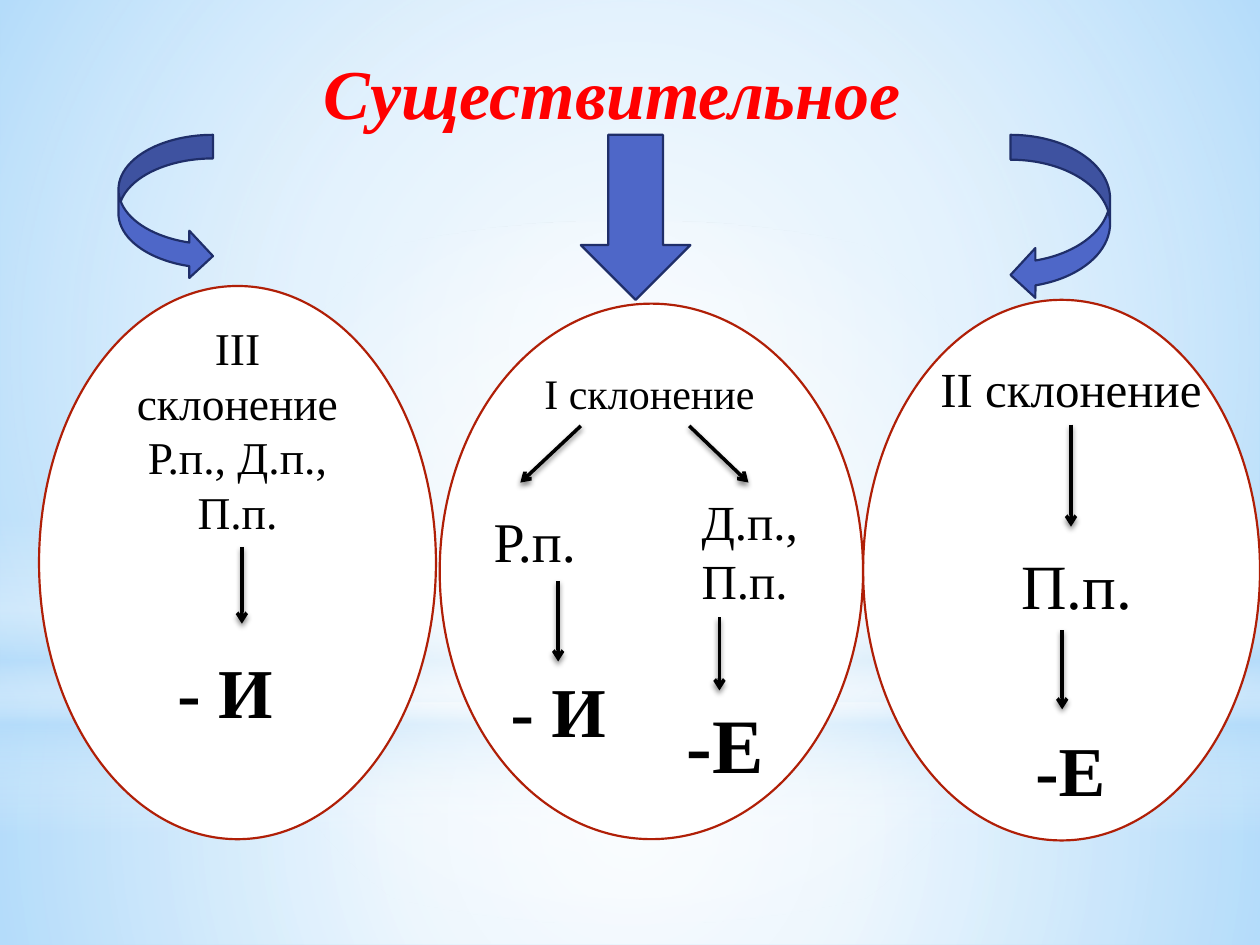
from lxml import etree
from pptx import Presentation, util as u
from pptx.dml.color import RGBColor
from pptx.enum import shapes, text
from pptx.oxml import parse_xml
from pptx.oxml.ns import nsdecls, qn

SCALE = 9144
FONT = "Times New Roman"
COLORS = {"sky": "B4DCFA", "white": "FFFFFF", "black": "000000", "title": "FF0000",
          "rim": "B01F07", "arrow": "4E67C8", "arrow_edge": "1F2E69"}
SHAPE = shapes.MSO_SHAPE
CENTER, LEFT = text.PP_ALIGN.CENTER, text.PP_ALIGN.LEFT

GLOWS = [
    (SHAPE.RECTANGLE, (0, 558, 1000, 192), "circle",
     [(0, "white", 91), (37, "white", 76), (100, "sky", 79)]),
    (SHAPE.RECTANGLE, (0, 0, 1000, 558), "circle",
     [(0, "white", 89), (48, "white", 62), (100, "sky", 79)]),
    (SHAPE.RECTANGLE, (0, 412, 1000, 250), "down",
     [(0, "white", 0), (29, "white", 30), (45, "sky", 40),
      (55, "white", 26), (65, "sky", 60), (100, "white", 0)]),
    (SHAPE.OVAL, (0, 175, 1000, 558), "circle",
     [(0, "white", 100), (56, "white", 0)]),
]
FIGURES = [
    (SHAPE.OVAL, (31, 227, 315, 439), "white", "rim"),
    (SHAPE.OVAL, (685, 238, 315, 429), "white", "rim"),
    (SHAPE.OVAL, (349, 241, 336, 425), "white", "rim"),
    (SHAPE.CURVED_RIGHT_ARROW, (94, 107, 75, 115), "arrow", "arrow_edge"),
    (SHAPE.CURVED_LEFT_ARROW, (802, 107, 79, 131), "arrow", "arrow_edge"),
    (SHAPE.DOWN_ARROW, (461, 107, 87, 131), "arrow", "arrow_edge"),
]
TITLE = ("Существительное", (136, 34, 700, 80), 40)
LABELS = {
    "third": (["III склонение", "Р.п., Д.п., П.п."], (94, 249, 189, 185), 26, CENTER),
    "first": (["I склонение"], (413, 287, 205, 50), 24, CENTER),
    "first genitive": (["Р.п."], (382, 397, 122, 64), 32, LEFT),
    "first dative": (["Д.п., П.п."], (547, 385, 102, 104), 28, LEFT),
    "second": (["II склонение"], (720, 280, 260, 57), 28, CENTER),
    "second case": (["П.п."], (768, 429, 173, 71), 36, CENTER),
}
ENDINGS = {
    "third ending": (["- И"], (94, 510, 169, 77), 40, CENTER),
    "genitive ending": (["- И"], (382, 525, 122, 77), 40, CENTER),
    "dative ending": (["-Е"], (517, 548, 117, 84), 44, CENTER),
    "second ending": (["-Е"], (781, 572, 137, 77), 40, CENTER),
}
LINKS = [
    ((192, 434), (192, 495), None, None),
    ((461, 338), (413, 383), None, None),
    ((547, 338), (594, 383), None, None),
    ((443, 461), (443, 525), "first genitive", "genitive ending"),
    ((571, 490), (571, 548), None, None),
    ((850, 338), (850, 418), "second", None),
    ((843, 500), (843, 563), None, None),
]


def px(values):
    return [value * SCALE for value in values]


def color(name):
    return RGBColor.from_string(COLORS[name])


def add_figure(slide, kind, box):
    shape = slide.shapes.add_shape(kind, *px(box))
    shape.shadow.inherit = False
    return shape


def add_glow(slide, kind, box, direction, stops):
    shape = add_figure(slide, kind, box)
    shape.line.fill.background()
    stop_xml = "".join(
        f'<a:gs pos="{position * 1000}"><a:srgbClr val="{COLORS[name]}">'
        f'<a:alpha val="{opacity * 1000}"/></a:srgbClr></a:gs>'
        for position, name, opacity in stops)
    if direction == "circle":
        course = ('<a:path path="circle"><a:fillToRect l="50000" t="50000" '
                  'r="50000" b="50000"/></a:path>')
    else:
        course = '<a:lin ang="5400000" scaled="0"/>'
    gradient = parse_xml(f'<a:gradFill {nsdecls("a")} rotWithShape="1">'
                         f'<a:gsLst>{stop_xml}</a:gsLst>{course}</a:gradFill>')
    shape._element.spPr.find(qn("a:prstGeom")).addnext(gradient)


def add_label(slide, lines, box, size, align, ink="black", bold=False, italic=False):
    label = slide.shapes.add_textbox(*px(box))
    frame = label.text_frame
    frame.word_wrap = True
    frame.text = "\n".join(lines)
    for paragraph in frame.paragraphs:
        paragraph.alignment = align
        font = paragraph.font
        font.name, font.size = FONT, u.Pt(size)
        font.bold, font.italic = bold, italic
        font.color.rgb = color(ink)
    return label


def add_link(slide, start, end, source, target):
    link = slide.shapes.add_connector(shapes.MSO_CONNECTOR.STRAIGHT, *px(start + end))
    if source:
        link.begin_connect(source, 2)
    if target:
        link.end_connect(target, 0)
    link.line.color.rgb = color("black")
    link.line.width = u.Pt(2)
    etree.SubElement(link.line._get_or_add_ln(), qn("a:tailEnd"), type="arrow")
    effects = etree.SubElement(link._element.spPr, qn("a:effectLst"))
    shadow = etree.SubElement(effects, qn("a:outerShdw"), blurRad=str(u.Pt(3.1)),
                              dist=str(u.Pt(1.8)), dir="5400000", rotWithShape="0")
    tint = etree.SubElement(shadow, qn("a:srgbClr"), val=COLORS["black"])
    etree.SubElement(tint, qn("a:alpha"), val="45000")


def main():
    presentation = Presentation()
    presentation.slide_width, presentation.slide_height = px((1000, 750))
    slide = presentation.slides.add_slide(presentation.slide_layouts[6])
    background = slide.background.fill
    background.solid()
    background.fore_color.rgb = color("sky")

    for glow in GLOWS:
        add_glow(slide, *glow)
    for kind, box, fill, edge in FIGURES:
        shape = add_figure(slide, kind, box)
        shape.fill.solid()
        shape.fill.fore_color.rgb = color(fill)
        shape.line.color.rgb = color(edge)
        shape.line.width = u.Pt(1.25)

    heading, box, size = TITLE
    add_label(slide, [heading], box, size, CENTER, "title", bold=True, italic=True)
    labels = {name: add_label(slide, *label) for name, label in LABELS.items()}
    for name, ending in ENDINGS.items():
        labels[name] = add_label(slide, *ending, bold=True)
    for start, end, source, target in LINKS:
        add_link(slide, start, end, labels.get(source), labels.get(target))

    presentation.save("out.pptx")


if __name__ == "__main__":
    main()
